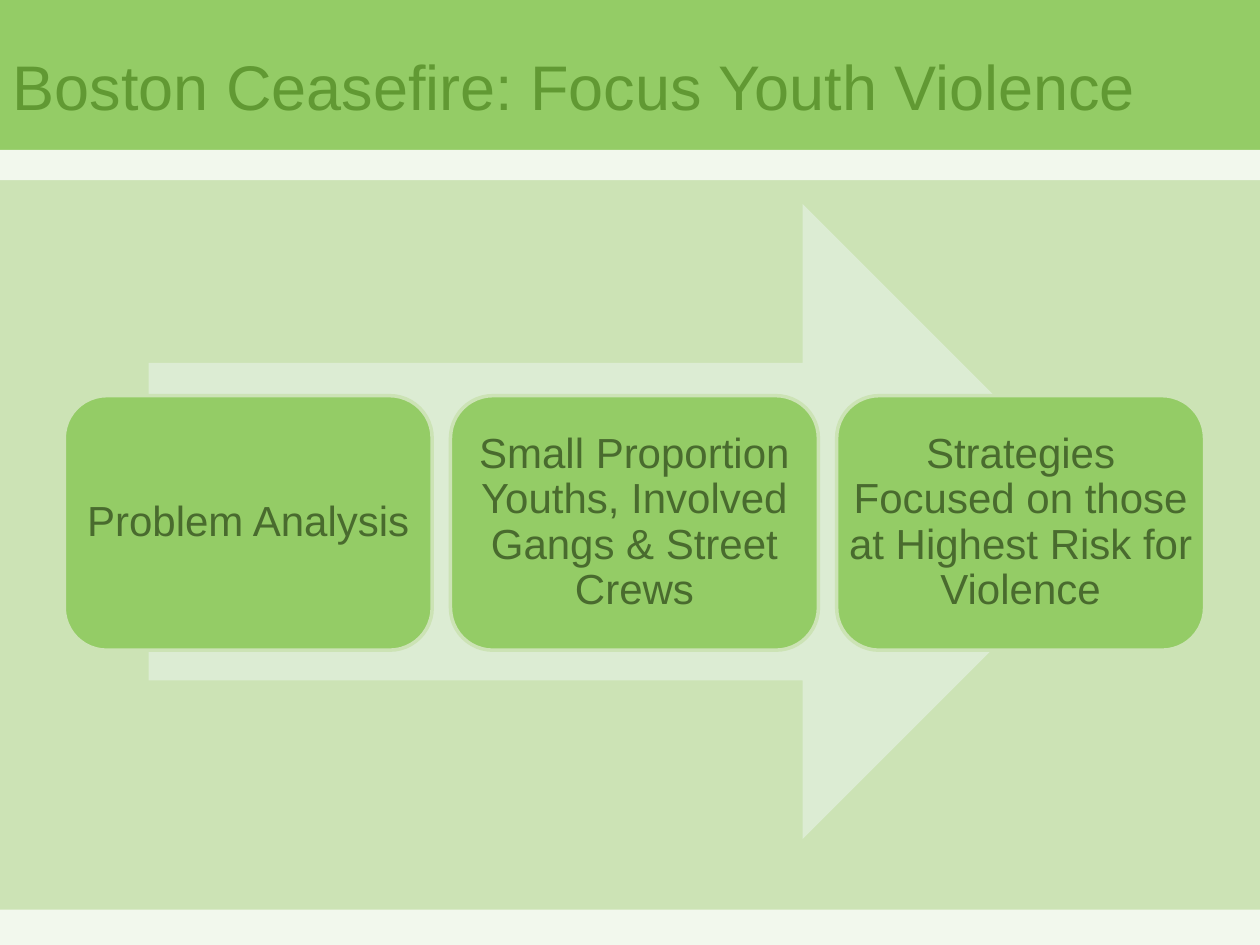
from pptx import Presentation
from pptx.dml.color import RGBColor
from pptx.enum.shapes import MSO_SHAPE as Shape
from pptx.enum.text import MSO_ANCHOR as Anchor, PP_ALIGN as Align
from pptx.util import Inches, Pt

GREEN, PALE, NEAR_WHITE = "94CC66", "CCE3B5", "F2F8ED"
ARROW_FILL, TITLE_COLOR, STEP_COLOR = "DCECD3", "619933", "496B2E"

# left, top, width, height, fill
BANDS = [
    (0, 0, 10, 1.31, GREEN),
    (0, 1.19, 10, 0.24, NEAR_WHITE),
    (0, 7.22, 10, 0.28, NEAR_WHITE),
]
STEPS = [
    "Problem Analysis",
    "Small Proportion Youths, Involved Gangs & Street Crews",
    "Strategies Focused on those at Highest Risk for Violence",
]
STEP_LEFT, STEP_TOP, STEP_WIDTH, STEP_HEIGHT = 0.51, 3.14, 2.92, 2.02
STEP_PITCH = 3.065


def color(hex_value):
    return RGBColor.from_string(hex_value)


def write_text(shape, text, *, size, hex_value, align=Align.LEFT,
               margin=None, line_spacing=None):
    frame = shape.text_frame
    frame.word_wrap = True
    frame.vertical_anchor = Anchor.MIDDLE
    if margin is not None:
        frame.margin_left = frame.margin_right = Inches(margin)
        frame.margin_top = frame.margin_bottom = Inches(margin)
    paragraph = frame.paragraphs[0]
    paragraph.alignment = align
    if line_spacing is not None:
        paragraph.line_spacing = line_spacing
    run = paragraph.add_run()
    run.text = text
    run.font.name = "Arial"
    run.font.size = Pt(size)
    run.font.color.rgb = color(hex_value)


def add_block(shapes, kind, left, top, width, height, fill, line=None):
    shape = shapes.add_shape(kind, Inches(left), Inches(top),
                             Inches(width), Inches(height))
    shape.shadow.inherit = False
    shape.fill.solid()
    shape.fill.fore_color.rgb = color(fill)
    if line:
        shape.line.color.rgb = color(line)
        shape.line.width = Pt(2)
    else:
        shape.line.fill.background()
    return shape


def add_title(slide, text):
    title = slide.shapes.title
    title.left, title.top = Inches(0), Inches(0.28)
    title.width, title.height = Inches(10), Inches(0.79)
    write_text(title, text, size=36, hex_value=TITLE_COLOR)
    # Bring the title in front of the bands
    slide.shapes._spTree.append(title._element)


def add_process(slide):
    shapes = slide.shapes.add_group_shape().shapes
    add_block(shapes, Shape.RIGHT_ARROW, 1.18, 1.62, 7.71, 5.04, ARROW_FILL)
    for index, text in enumerate(STEPS):
        step = add_block(shapes, Shape.ROUNDED_RECTANGLE,
                         STEP_LEFT + index * STEP_PITCH, STEP_TOP,
                         STEP_WIDTH, STEP_HEIGHT, GREEN, line=PALE)
        # The rounded corners already inset the text
        write_text(step, text, size=24, hex_value=STEP_COLOR,
                   align=Align.CENTER, margin=0, line_spacing=0.9)


def main():
    presentation = Presentation()
    presentation.slide_width, presentation.slide_height = Inches(10), Inches(7.5)
    slide = presentation.slides.add_slide(presentation.slide_layouts[5])

    # Background and bands
    slide.background.fill.solid()
    slide.background.fill.fore_color.rgb = color(PALE)
    for left, top, width, height, fill in BANDS:
        add_block(slide.shapes, Shape.RECTANGLE, left, top, width, height, fill)

    # Title and process diagram
    add_title(slide, "Boston Ceasefire: Focus Youth Violence")
    add_process(slide)
    presentation.save("out.pptx")


if __name__ == "__main__":
    main()
